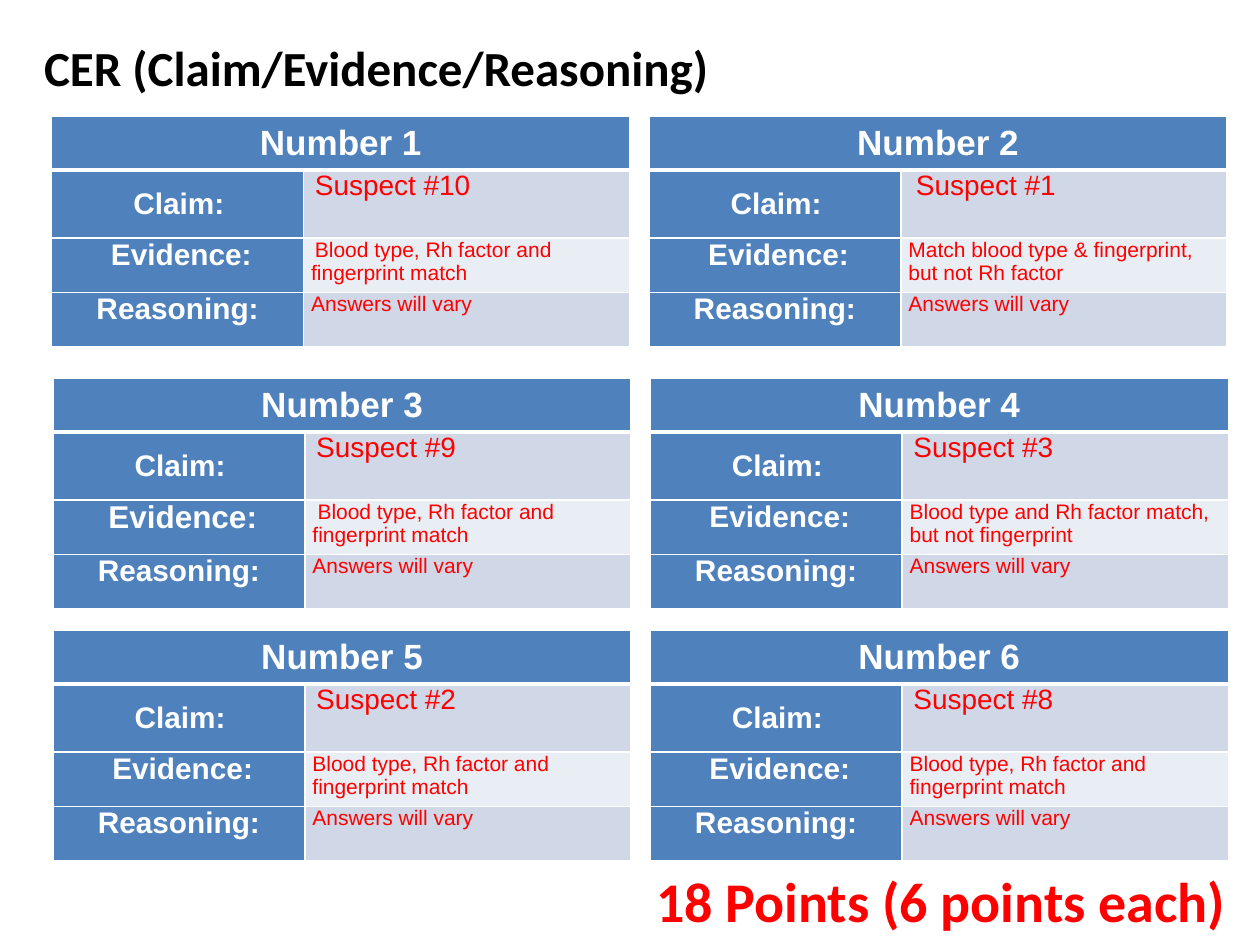
from lxml import etree
from pptx import Presentation
from pptx.dml.color import RGBColor
from pptx.enum.text import MSO_ANCHOR, PP_ALIGN
from pptx.oxml.ns import qn
from pptx.util import Inches, Pt

LEFT, CENTER, RIGHT = PP_ALIGN.LEFT, PP_ALIGN.CENTER, PP_ALIGN.RIGHT
TOP, MIDDLE = MSO_ANCHOR.TOP, MSO_ANCHOR.MIDDLE
TITLE_ONLY = 5

COLORS = {
    "black": "000000",
    "white": "FFFFFF",
    "answer": "FF0000",
    "header": "4F81BD",
    "band_dark": "D0D8E8",
    "band_light": "E9EDF4",
}
COL_WIDTHS = (2, 2.59)
ROW_HEIGHTS = (0.43, 0.54, 0.43, 0.43)
COLUMN_GAP = 4.74
BLOOD_MATCH = "Blood type, Rh factor and fingerprint match"

# left and top of each pair of tables
PAIR_ORIGINS = ((0.41, 0.92), (0.42, 3), (0.42, 5))

# claim, claim indent, evidence, evidence indent, size of the evidence label
ANSWERS = (
    ("Suspect #10", 0.03, BLOOD_MATCH, 0.03, 17),
    ("Suspect #1", 0.06, "Match blood type & fingerprint, but not Rh factor", 0, 17),
    ("Suspect #9", 0.03, BLOOD_MATCH, 0.04, 18),
    ("Suspect #3", 0.03, "Blood type and Rh factor match, but not fingerprint", 0, 17),
    ("Suspect #2", 0.03, BLOOD_MATCH, 0, 17),
    ("Suspect #8", 0.03, BLOOD_MATCH, 0, 17),
)


def write(tf, text, size, color, font="Arial", bold=True, align=LEFT,
          margin=0, indent=0):
    """Set the only paragraph of a text frame; margin and indent in inches."""
    tf.word_wrap = True
    p = tf.paragraphs[0]
    p.alignment = align
    pPr = p._p.get_or_add_pPr()
    pPr.set("marL", str(Inches(margin)))
    pPr.set("indent", str(Inches(indent)))
    r = p.add_run()
    r.text = text
    r.font.size = Pt(size)
    r.font.name = font
    r.font.bold = bold
    r.font.color.rgb = RGBColor.from_string(COLORS[color])


def set_borders(cell, top=1, bottom=1):
    """Draw white cell borders, with widths in points."""
    tcPr = cell._tc.get_or_add_tcPr()
    widths = {"lnL": 1, "lnR": 1, "lnT": top, "lnB": bottom}
    for tag, width in widths.items():
        ln = etree.SubElement(tcPr, qn(f"a:{tag}"), w=str(Pt(width)))
        fill = etree.SubElement(ln, qn("a:solidFill"))
        etree.SubElement(fill, qn("a:srgbClr"), val=COLORS["white"])


class SlideBuilder:
    def __init__(self, prs):
        self.slide = prs.slides.add_slide(prs.slide_layouts[TITLE_ONLY])

    def title(self, text, box):
        sp = self.slide.shapes.title
        sp.left, sp.top, sp.width, sp.height = map(Inches, box)
        sp.text_frame.vertical_anchor = TOP
        write(sp.text_frame, text, 28, "black", font="Calibri")

    def note(self, text, box):
        sp = self.slide.shapes.add_textbox(*map(Inches, box))
        write(sp.text_frame, text, 32, "answer", font="Calibri", align=RIGHT)

    def cell(self, cell, text, size, fill, color="white", anchor=TOP, **style):
        cell.margin_left = cell.margin_right = Inches(0.06)
        cell.margin_top = cell.margin_bottom = 0
        cell.vertical_anchor = anchor
        cell.fill.solid()
        cell.fill.fore_color.rgb = RGBColor.from_string(COLORS[fill])
        if text:
            write(cell.text_frame, text, size, color, **style)

    def cer_table(self, number, left, top, answer):
        claim, claim_indent, evidence, evidence_indent, evidence_size = answer
        frame = self.slide.shapes.add_table(
            len(ROW_HEIGHTS), len(COL_WIDTHS), Inches(left), Inches(top),
            Inches(sum(COL_WIDTHS)), Inches(sum(ROW_HEIGHTS)))
        table = frame.table
        for column, width in zip(table.columns, COL_WIDTHS):
            column.width = Inches(width)
        for i, (row, height) in enumerate(zip(table.rows, ROW_HEIGHTS)):
            row.height = Inches(height)
            for cell in row.cells:
                set_borders(cell, top=3 if i == 1 else 1, bottom=3 if i == 0 else 1)

        table.cell(0, 0).merge(table.cell(0, 1))
        self.cell(table.cell(0, 0), f"Number {number}", 20, "header",
                  anchor=MIDDLE, align=CENTER)
        self.cell(table.cell(0, 1), "", 20, "header")

        rows = (
            ("Claim:", 17, 0.02, MIDDLE, claim, 16, claim_indent, "band_dark"),
            ("Evidence:", evidence_size, 0.06, TOP,
             evidence, 12, evidence_indent, "band_light"),
            ("Reasoning:", 17, 0, TOP, "Answers will vary", 12, 0, "band_dark"),
        )
        for i, row in enumerate(rows, start=1):
            label, label_size, margin, anchor, value, size, indent, band = row
            self.cell(table.cell(i, 0), label, label_size, "header",
                      anchor=anchor, align=CENTER, margin=margin)
            self.cell(table.cell(i, 1), value, size, band, color="answer",
                      bold=False, indent=indent)


def main():
    prs = Presentation()
    prs.slide_width, prs.slide_height = Inches(10), Inches(7.5)
    s = SlideBuilder(prs)
    s.title("CER (Claim/Evidence/Reasoning)", (0.25, 0.25, 9.5, 1.04))
    for i, answer in enumerate(ANSWERS):
        left, top = PAIR_ORIGINS[i // 2]
        s.cer_table(i + 1, left + i % 2 * COLUMN_GAP, top, answer)
    s.note("18 Points (6 points each)", (3.46, 6.83, 6.37, 0.64))
    prs.save("out.pptx")


if __name__ == "__main__":
    main()
